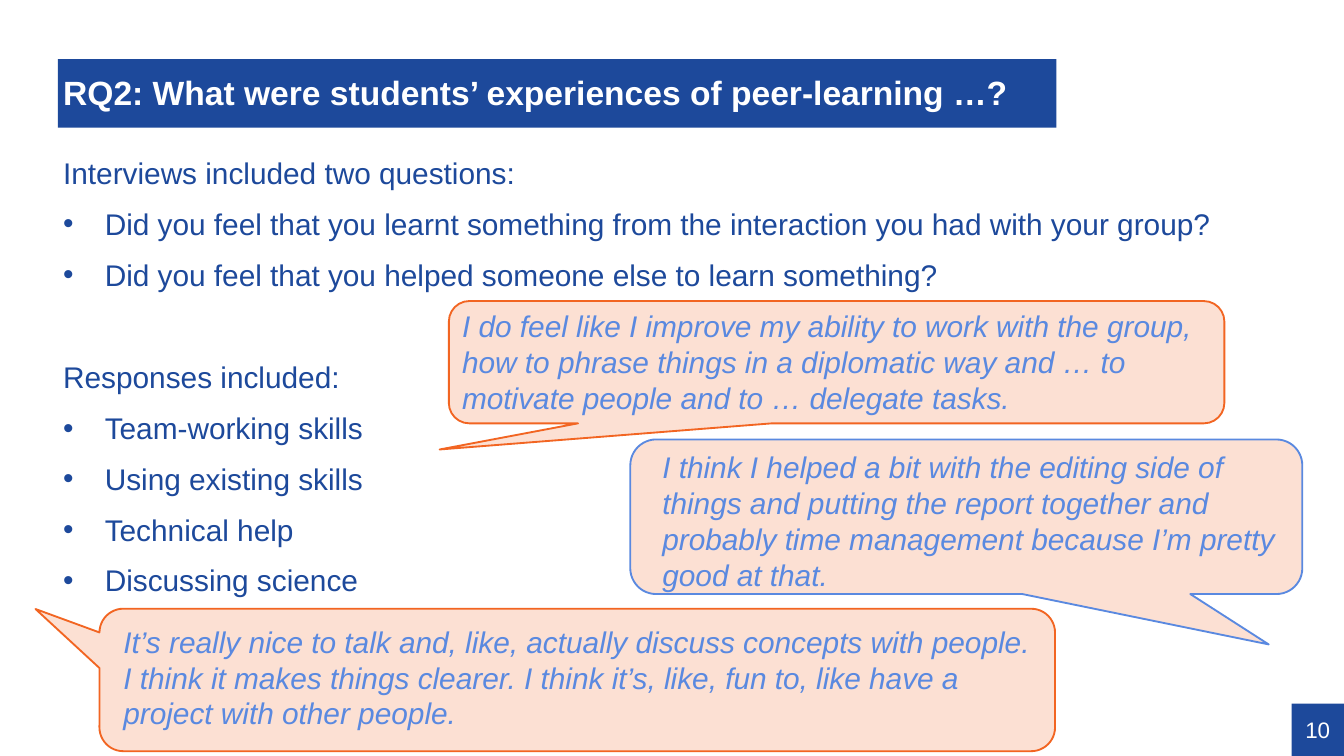
"""Build the slide on students' experiences of peer-learning."""
import dataclasses

import lxml.etree
import pptx
import pptx.dml.color
import pptx.enum.shapes
import pptx.enum.text
import pptx.oxml.ns
import pptx.util

SHAPES = pptx.enum.shapes.MSO_SHAPE
ANCHOR = pptx.enum.text.MSO_ANCHOR
ALIGN = pptx.enum.text.PP_ALIGN
FIT = pptx.enum.text.MSO_AUTO_SIZE


@dataclasses.dataclass(frozen=True)
class Theme:
    """Hold the colours, type sizes and grid of the deck."""
    font: str = "Arial"
    navy: str = "1D499B"
    sky: str = "5A89E0"
    orange: str = "F26522"
    peach: str = "FCE0D3"
    white: str = "FFFFFF"
    title_size: int = 18
    body_size: int = 16
    number_size: int = 12
    width: float = 10
    height: float = 10 * 9 / 16
    unit: float = 0.1


THEME = Theme()

SECTIONS = [
    ("Interviews included two questions:", [
        "Did you feel that you learnt something from the interaction you had with your group?",
        "Did you feel that you helped someone else to learn something?",
    ]),
    ("Responses included:", [
        "Team-working skills",
        "Using existing skills",
        "Technical help",
        "Discussing science",
    ]),
]

QUOTES = [
    ((33.4, 22.4, 57.7, 9.1), (-0.512, 0.714), THEME.orange, (33.4, 22.4, 57.7, 9.1),
     "I do feel like I improve my ability to work with the group, how to phrase things "
     "in a diplomatic way and … to motivate people and to … delegate tasks."),
    ((7.4, 45.3, 71.1, 10.6), (-0.567, -0.498), THEME.orange, (8.2, 45.9, 70, 9.1),
     "It’s really nice to talk and, like, actually discuss concepts with people. I think "
     "it makes things clearer. I think it’s, like, fun to, like have a project with other people."),
    ((46.9, 32.7, 50, 11.5), (0.45, 0.826), THEME.sky, (48.3, 32.9, 50, 11.8),
     "I think I helped a bit with the editing side of things and putting the report together "
     "and probably time management because I’m pretty good at that."),
]


def cells(*counts):
    """Turn counts of grid columns and rows into lengths."""
    return [pptx.util.Inches(count * THEME.unit) for count in counts]


def colour(code):
    """Return the colour for a hex code."""
    return pptx.dml.color.RGBColor.from_string(code)


def paint(shape, fill):
    """Fill a shape with one plain colour."""
    shape.fill.solid()
    shape.fill.fore_color.rgb = colour(fill)


def move(shape, area):
    """Place a shape on the grid."""
    shape.left, shape.top, shape.width, shape.height = cells(*area)


def set_frame(frame, insets=(0, 0, 0, 0), anchor=ANCHOR.TOP, fit=FIT.NONE):
    """Set the insets in inches, anchor and fit of a text frame."""
    frame.word_wrap = True
    frame.auto_size = fit
    frame.vertical_anchor = anchor
    sides = [pptx.util.Inches(inset) for inset in insets]
    frame.margin_left, frame.margin_top, frame.margin_right, frame.margin_bottom = sides


def add_span(para, text, size, code, bold=False, italic=False):
    """Add one formatted run to a paragraph."""
    span = para.add_run()
    span.text = text
    span.font.name = THEME.font
    span.font.size = pptx.util.Pt(size)
    span.font.color.rgb = colour(code)
    span.font.bold = bold
    span.font.italic = italic


def set_bullet(para, bulleted):
    """Give a paragraph a hanging bullet, or none."""
    indent = pptx.util.Inches(0.31) if bulleted else 0
    props = para._p.get_or_add_pPr()
    props.set("marL", str(indent))
    props.set("indent", str(-indent))
    tag = "a:buChar" if bulleted else "a:buNone"
    bullet = lxml.etree.SubElement(props, pptx.oxml.ns.qn(tag))
    if bulleted:
        bullet.set("char", "•")


def add_title(page, text):
    """Write the title on its navy band."""
    title = page.shapes.title
    move(title, (4.3, 4.4, 74.3, 5.1))
    paint(title, THEME.navy)
    set_frame(title.text_frame, (0.04, 0.02, 0, 0), ANCHOR.MIDDLE)
    para = title.text_frame.paragraphs[0]
    para.alignment = ALIGN.LEFT
    para.line_spacing = 0.9
    add_span(para, text, THEME.title_size, THEME.white, bold=True)


def add_body(page, sections):
    """Write each heading with its bulleted lines in the body placeholder."""
    body = page.placeholders[1]
    move(body, (4.7, 11.8, 91.3, 40.5))
    set_frame(body.text_frame)
    para = None
    for heading, points in sections:
        for text in [heading, *points]:
            is_heading = text == heading
            first = para is None
            para = body.text_frame.paragraphs[0] if first else body.text_frame.add_paragraph()
            set_bullet(para, not is_heading)
            para.line_spacing = 0.9
            gap = 0 if first else 37.5 if is_heading else 10
            para.space_before = pptx.util.Pt(gap)
            para.space_after = pptx.util.Pt(0)
            add_span(para, text, THEME.body_size, THEME.navy)


def add_quote(page, bubble_area, tail, line, text_area, text):
    """Draw a speech bubble and the quotation over it."""
    bubble = page.shapes.add_shape(SHAPES.ROUNDED_RECTANGULAR_CALLOUT, *cells(*bubble_area))
    bubble.shadow.inherit = False
    for index, value in enumerate((*tail, 0.167)):
        bubble.adjustments[index] = value
    paint(bubble, THEME.peach)
    bubble.line.color.rgb = colour(line)
    bubble.line.width = pptx.util.Pt(1)
    box = page.shapes.add_textbox(*cells(*text_area))
    set_frame(box.text_frame, (0.1, 0.05, 0.1, 0.05), fit=FIT.SHAPE_TO_FIT_TEXT)
    add_span(box.text_frame.paragraphs[0], text, THEME.body_size, THEME.sky, italic=True)


def add_page_number(page, text):
    """Put the page number in the bottom right corner."""
    side = 3.9
    columns, rows = THEME.width / THEME.unit, THEME.height / THEME.unit
    badge = page.shapes.add_shape(
        SHAPES.RECTANGLE, *cells(columns - side, rows - side, side, side))
    badge.shadow.inherit = False
    paint(badge, THEME.navy)
    badge.line.fill.background()
    set_frame(badge.text_frame, anchor=ANCHOR.MIDDLE)
    para = badge.text_frame.paragraphs[0]
    para.alignment = ALIGN.CENTER
    add_span(para, text, THEME.number_size, THEME.white)


def main():
    """Build and save the deck."""
    deck = pptx.Presentation()
    deck.slide_width = pptx.util.Inches(THEME.width)
    deck.slide_height = pptx.util.Inches(THEME.height)
    page = deck.slides.add_slide(deck.slide_layouts[1])
    add_title(page, "RQ2: What were students’ experiences of peer-learning …?")
    add_body(page, SECTIONS)
    for quote in QUOTES:
        add_quote(page, *quote)
    add_page_number(page, "10")
    deck.save("out.pptx")


if __name__ == "__main__":
    main()
